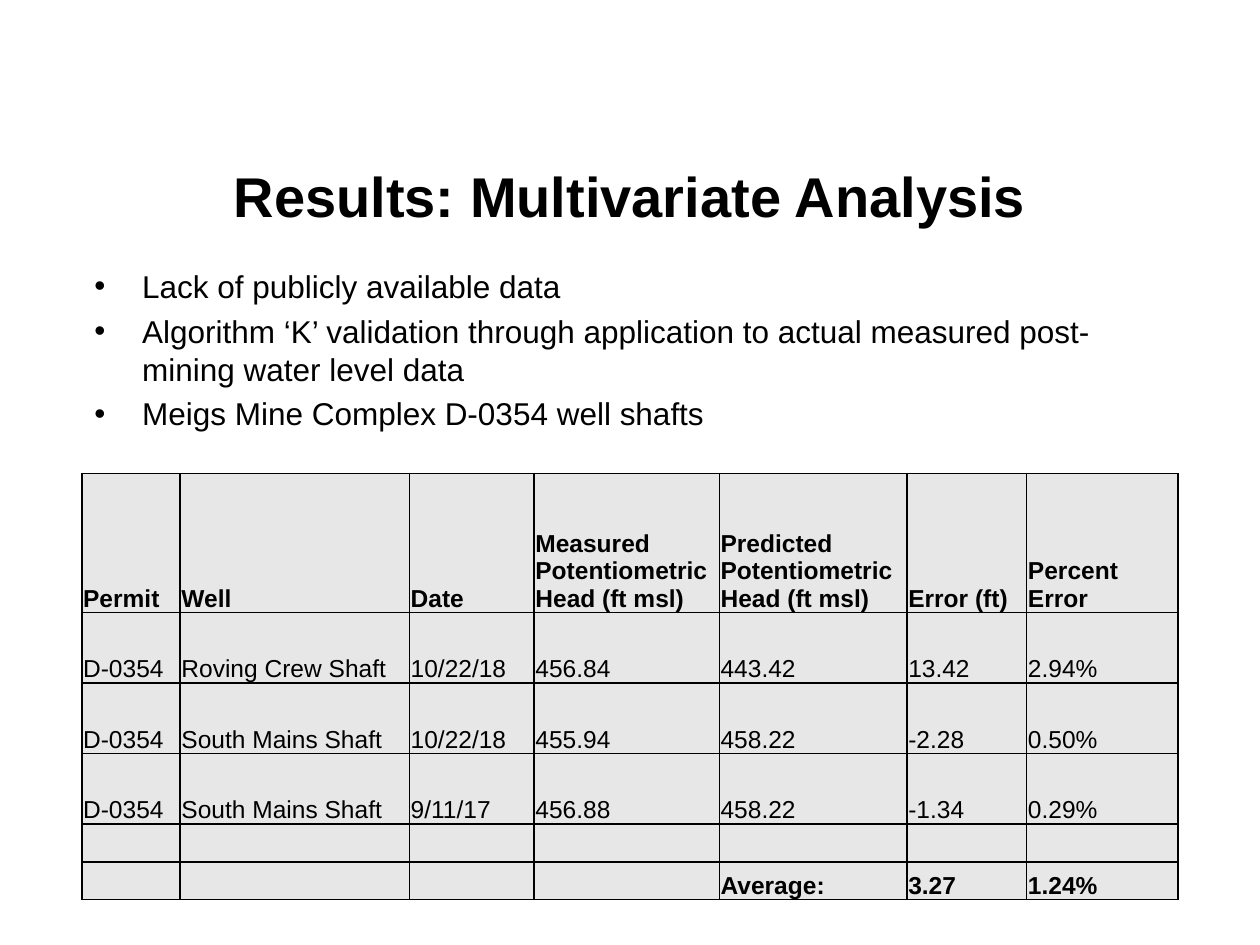
from pptx import Presentation
from pptx.dml.color import RGBColor
from pptx.enum.text import MSO_ANCHOR, PP_ALIGN
from pptx.oxml.ns import qn
from pptx.util import Inches, Pt
from lxml.etree import SubElement

HUES = {"ink": "000000", "cell": "E7E7E7"}
FONT = "Arial"
LEFT, WIDTH = 0.65, 8.7

POINTS = [
    "Lack of publicly available data",
    "Algorithm ‘K’ validation through application to actual measured "
    "post-mining water level data",
    "Meigs Mine Complex D-0354 well shafts",
]
COLS = [0.78, 1.82, 0.99, 1.47, 1.49, 0.95, 1.2]
ROWS = [1.1, 0.56, 0.56, 0.56, 0.3, 0.3]
WELLS = [
    ["Permit", "Well", "Date", "Measured Potentiometric Head (ft msl)",
     "Predicted Potentiometric Head (ft msl)", "Error (ft)", "Percent Error"],
    ["D-0354", "Roving Crew Shaft", "10/22/18", "456.84", "443.42", "13.42", "2.94%"],
    ["D-0354", "South Mains Shaft", "10/22/18", "455.94", "458.22", "-2.28", "0.50%"],
    ["D-0354", "South Mains Shaft", "9/11/17", "456.88", "458.22", "-1.34", "0.29%"],
    [""] * 7,
    [""] * 4 + ["Average:", "3.27", "1.24%"],
]


def color(name):
    return RGBColor.from_string(HUES[name])


def write(para, text, size=14, bold=False, align=PP_ALIGN.LEFT, before=0):
    para.alignment = align
    para.space_before = Pt(before)
    font = para.font
    if text:
        run = para.add_run()
        run.text = text
        font = run.font
    font.name, font.size, font.bold = FONT, Pt(size), bold
    font.color.rgb = color("ink")


def bullet(para, indent):
    props = para._p.get_or_add_pPr()
    props.set("marL", str(Inches(indent)))
    props.set("indent", str(-Inches(indent)))
    SubElement(props, qn("a:buFont"), typeface=FONT)
    SubElement(props, qn("a:buChar"), char="•")


def border(cell, width=1):
    """Draw all four edges; they must precede the cell's fill."""
    props = cell._tc.get_or_add_tcPr()
    for side in ("lnL", "lnR", "lnT", "lnB"):
        line = SubElement(props, qn(f"a:{side}"), w=str(Pt(width)))
        fill = SubElement(line, qn("a:solidFill"))
        SubElement(fill, qn("a:srgbClr"), val=HUES["ink"])


class Deck:
    def __init__(self):
        self.prs = Presentation()
        self.prs.slide_width = Inches(10)
        self.prs.slide_height = Inches(7.5)
        self.slide = self.prs.slides.add_slide(self.prs.slide_layouts[5])

    def title(self, text, top, height):
        shape = self.slide.shapes.title
        shape.left, shape.top = Inches(LEFT), Inches(top)
        shape.width, shape.height = Inches(WIDTH), Inches(height)
        frame = shape.text_frame
        frame.vertical_anchor = MSO_ANCHOR.MIDDLE
        write(frame.paragraphs[0], text, size=32, bold=True, align=PP_ALIGN.CENTER)

    def points(self, items, top, height):
        box = self.slide.shapes.add_textbox(
            Inches(LEFT), Inches(top), Inches(WIDTH), Inches(height))
        frame = box.text_frame
        frame.word_wrap = True
        for i, text in enumerate(items):
            para = frame.add_paragraph() if i else frame.paragraphs[0]
            bullet(para, 0.38)
            write(para, text, size=18, before=4 if i else 0)

    def table(self, data, top):
        table = self.slide.shapes.add_table(
            len(ROWS), len(COLS), Inches(LEFT), Inches(top),
            Inches(WIDTH), Inches(sum(ROWS))).table
        for col, width in zip(table.columns, COLS):
            col.width = Inches(width)
        for r, (row, height) in enumerate(zip(table.rows, ROWS)):
            row.height = Inches(height)
            strong = r in (0, len(ROWS) - 1)
            for cell, text in zip(row.cells, data[r]):
                self.cell(cell, text, strong)

    def cell(self, cell, text, bold):
        border(cell)
        cell.fill.solid()
        cell.fill.fore_color.rgb = color("cell")
        cell.margin_left = cell.margin_right = cell.margin_top = Inches(0.01)
        cell.margin_bottom = 0
        cell.vertical_anchor = MSO_ANCHOR.BOTTOM
        write(cell.text_frame.paragraphs[0], text, bold=bold)


def main():
    deck = Deck()
    deck.title("Results: Multivariate Analysis", 0.84, 1.41)
    deck.points(POINTS, 2.07, 1.28)
    deck.table(WELLS, 3.76)
    deck.prs.save("out.pptx")


if __name__ == "__main__":
    main()
